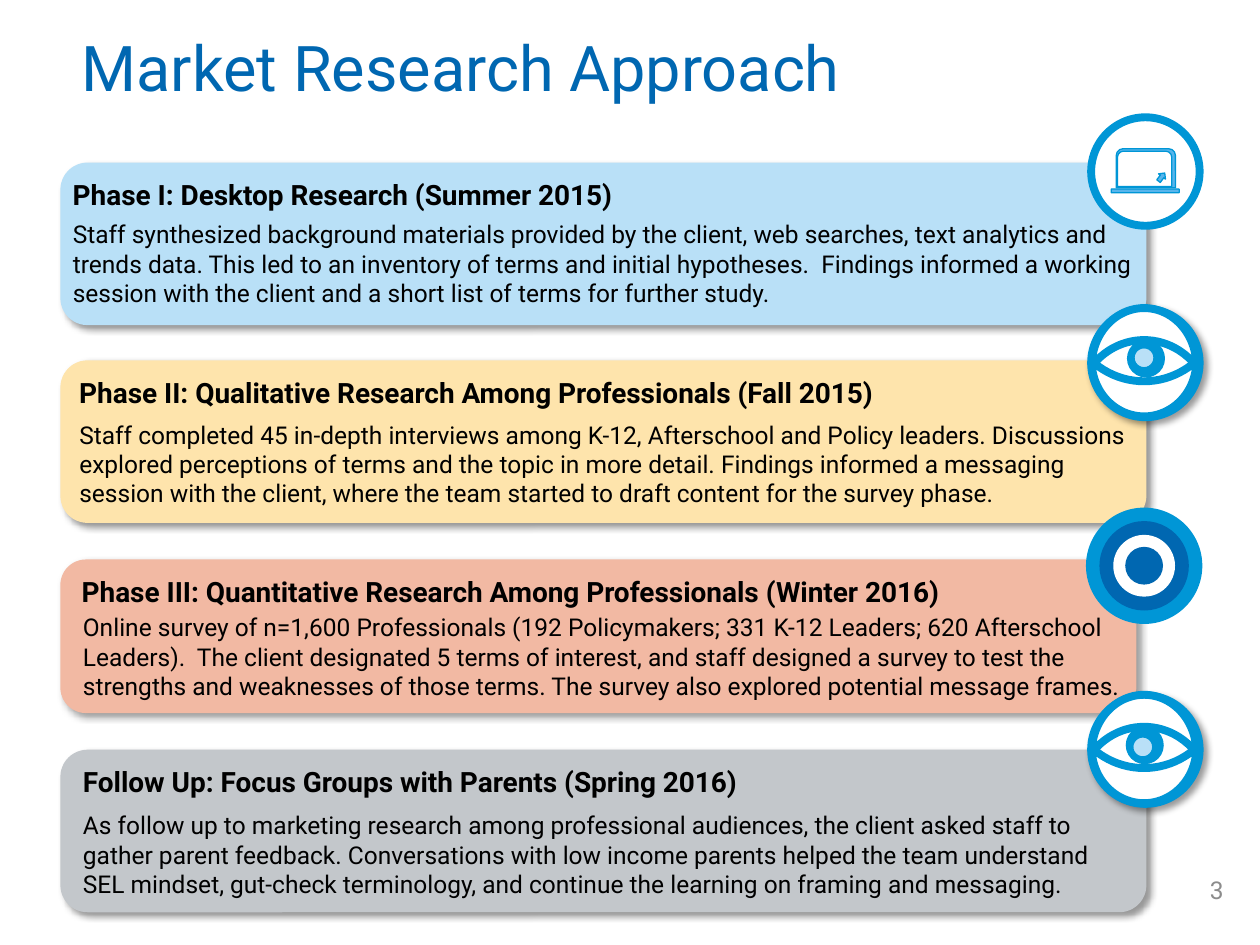
from dataclasses import dataclass

from lxml.etree import SubElement
from pptx import Presentation
from pptx.dml.color import RGBColor
from pptx.enum.shapes import MSO_SHAPE as Geo
from pptx.enum.text import MSO_ANCHOR as Anchor, PP_ALIGN as Align
from pptx.oxml.ns import qn
from pptx.util import Pt

WHITE = RGBColor(0xFF, 0xFF, 0xFF)
BLACK = RGBColor(0x00, 0x00, 0x00)
GREY = RGBColor(0x8C, 0x8C, 0x8C)
NAVY = RGBColor(0x00, 0x67, 0xB1)
BLUE = RGBColor(0x00, 0x96, 0xD6)
SKY = RGBColor(0x58, 0xB5, 0xEC)
PALE = RGBColor(0xB9, 0xE0, 0xF7)
SAND = RGBColor(0xFE, 0xE4, 0xAC)
CORAL = RGBColor(0xF2, 0xB9, 0xA3)
SILVER = RGBColor(0xC3, 0xC7, 0xCB)

FONT = "Roboto"
LEFT = 34.5
SIZE = 62  # diameter of a round icon


@dataclass
class Mark:
    """A preset shape, placed relative to the corner of its icon."""
    x: float
    y: float
    w: float
    h: float
    fill: RGBColor
    geo: Geo = Geo.OVAL
    line: float = 0
    turn: float = 0
    adj: float | None = None
    shade: bool = False


@dataclass
class Phase:
    top: float
    w: float
    h: float
    fill: RGBColor
    head: str
    body: str
    head_x: float
    body_x: float
    body_y: float
    body_w: float


def add_shade(shape) -> None:
    """Give the shape a soft shadow towards the lower right."""
    effects = shape._element.spPr.find(qn("a:effectLst"))
    outer = SubElement(effects, qn("a:outerShdw"), blurRad=str(Pt(4)),
                       dist=str(Pt(3)), dir="2700000", algn="tl", rotWithShape="0")
    color = SubElement(outer, qn("a:srgbClr"), val=str(BLACK))
    SubElement(color, qn("a:alpha"), val="40000")


def add_mark(slide, mark: Mark, x: float = 0, y: float = 0) -> None:
    shape = slide.shapes.add_shape(mark.geo, Pt(x + mark.x), Pt(y + mark.y),
                                   Pt(mark.w), Pt(mark.h))
    shape.shadow.inherit = False
    shape.fill.solid()
    shape.fill.fore_color.rgb = mark.fill
    shape.rotation = mark.turn
    if mark.line:
        shape.line.color.rgb = BLUE
        shape.line.width = Pt(mark.line)
    else:
        shape.line.fill.background()
    if mark.adj is not None:
        shape.adjustments[0] = mark.adj
    if mark.shade:
        add_shade(shape)


def add_text(slide, text: str, x: float, y: float, w: float, h: float,
             size: float, color: RGBColor = BLACK, bold: bool = False,
             anchor: Anchor = Anchor.TOP, align: Align = Align.LEFT) -> None:
    frame = slide.shapes.add_textbox(Pt(x), Pt(y), Pt(w), Pt(h)).text_frame
    frame.word_wrap = True
    frame.vertical_anchor = anchor
    para = frame.paragraphs[0]
    para.text = text
    para.alignment = align
    font = para.font
    font.name, font.size, font.bold = FONT, Pt(size), bold
    font.color.rgb = color


def add_phase(slide, item: Phase) -> None:
    add_mark(slide, Mark(LEFT, item.top, item.w, item.h, item.fill,
                         Geo.ROUNDED_RECTANGLE, shade=True))
    add_text(slide, item.head, item.head_x, item.top + 5.2, 543, 26.6, 16, bold=True)
    add_text(slide, item.body, item.body_x, item.body_y, item.body_w, 58.3, 14)


def disc(size: float, fill: RGBColor, line: float = 0, shade: bool = False) -> Mark:
    """A circle centred in the icon."""
    gap = (SIZE - size) / 2
    return Mark(gap, gap, size, size, fill, line=line, shade=shade)


def eye(dx: float = 0, dy: float = 0) -> list[Mark]:
    """An eye, with its pupil moved by dx and dy."""
    return [
        disc(SIZE, WHITE, 4.5, shade=True),
        Mark(20.9 + dx, 18, 20.9, 20.9, BLUE, line=0.85),
        Mark(24.5 + dx, 22.3 + dy, 11.5, 11.5, PALE, line=0.85),
        Mark(13.7, -13.7, 33.1, 59.8, WHITE, Geo.MOON, 4.5, 90, 0.552),
        Mark(14.4, 15.8, 31.7, 59.8, WHITE, Geo.MOON, 4.5, 270, 0.633),
    ]


LAPTOP = [
    disc(SIZE, WHITE, 4.5),
    Mark(14.4, 18, 33.8, 22.3, SKY, Geo.ROUND_2_SAME_RECTANGLE, 0.75),
    Mark(15.1, 19.4, 31, 20.2, WHITE, Geo.ROUND_2_SAME_RECTANGLE, 0.75),
    Mark(11.5, 41, 38.9, 2.2, SKY, Geo.ROUNDED_RECTANGLE, 0.75),
    Mark(37.4, 31.7, 5.8, 5, SKY, Geo.RIGHT_ARROW, 0.75, 307.4),
]
TARGET = [
    disc(SIZE, WHITE, 4.5),
    disc(55.4, BLUE, 4.5),
    disc(51.1, NAVY),
    disc(35.3, WHITE),
    disc(21.6, NAVY),
]
ICONS = [
    (623.5, 67, LAPTOP),
    (623.5, 176.4, eye()),
    (622.8, 292.3, TARGET),
    (623.5, 397.4, eye(-0.7, 1.4)),
]

PHASES = [
    Phase(92.9, 620.6, 92.9, PALE, "Phase I: Desktop Research (Summer 2015)",
          "Staff synthesized background materials provided by the client, web "
          "searches, text analytics and trends data. This led to an inventory of "
          "terms and initial hypotheses.  Findings informed a working session with "
          "the client and a short list of terms for further study.",
          LEFT, LEFT, 121.7, 620.6),
    Phase(205.9, 620.6, 92.9, SAND,
          "Phase II: Qualitative Research Among Professionals (Fall 2015)",
          "Staff completed 45 in-depth interviews among K-12, Afterschool and Policy "
          "leaders. Discussions explored perceptions of terms and the topic in more "
          "detail. Findings informed a messaging session with the client, where the "
          "team started to draft content for the survey phase.",
          38.2, 38.2, 236.2, 613.4),
    Phase(319.7, 614.9, 87.8, CORAL,
          "Phase III: Quantitative Research Among Professionals (Winter 2016)",
          "Online survey of n=1,600 Professionals (192 Policymakers; 331 K-12 "
          "Leaders; 620 Afterschool Leaders).  The client designated 5 terms of "
          "interest, and staff designed a survey to test the strengths and weaknesses "
          "of those terms. The survey also explored potential message frames.",
          39.6, 40.3, 346.3, 614.9),
    Phase(428.4, 620.6, 92.9, SILVER,
          "Follow Up: Focus Groups with Parents (Spring 2016)",
          "As follow up to marketing research among professional audiences, the "
          "client asked staff to gather parent feedback. Conversations with low income "
          "parents helped the team understand SEL mindset, gut-check terminology, "
          "and continue the learning on framing and messaging.",
          40.3, 40.3, 459.4, 613.4),
]


def main() -> None:
    deck = Presentation()
    deck.slide_width, deck.slide_height = Pt(720), Pt(540)
    slide = deck.slides.add_slide(deck.slide_layouts[6])
    add_text(slide, "Market Research Approach", 39.6, 0, 564.5, 76.3, 36, NAVY,
             anchor=Anchor.MIDDLE)
    add_text(slide, "3", 653, 493.9, 53.3, 28.8, 14, GREY,
             anchor=Anchor.MIDDLE, align=Align.RIGHT)
    for item in PHASES:
        add_phase(slide, item)
    for x, y, marks in ICONS:
        for mark in marks:
            add_mark(slide, mark, x, y)
    deck.save("out.pptx")


if __name__ == "__main__":
    main()
